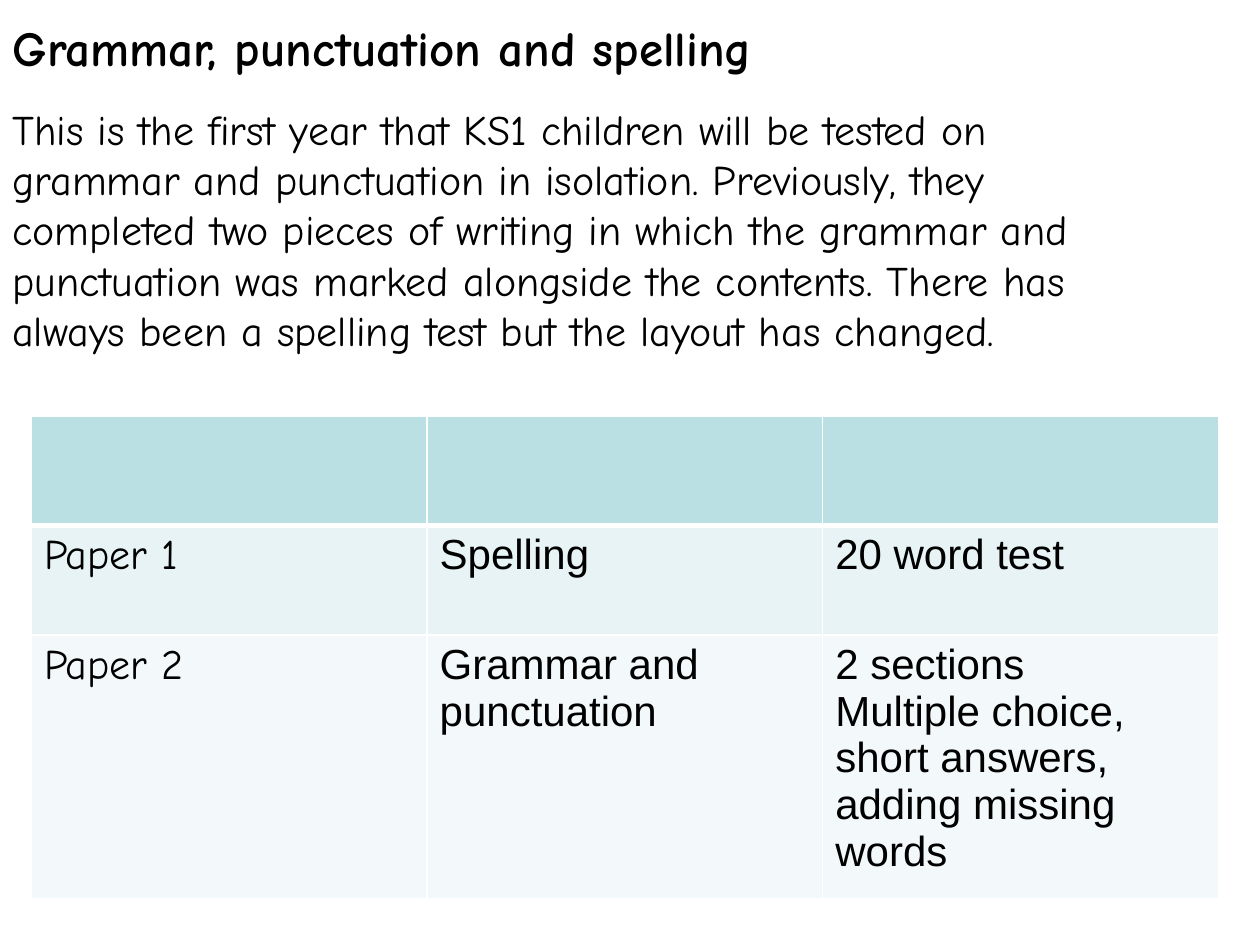
from lxml import etree
from pptx import Presentation
from pptx.dml.color import RGBColor
from pptx.enum import text
from pptx.oxml import ns
from pptx.util import Inches, Pt

TITLE = "Grammar, punctuation and spelling"
INTRO = (
    "This is the first year that KS1 children will be tested on grammar and "
    "punctuation in isolation. Previously, they completed two pieces of writing "
    "in which the grammar and punctuation was marked alongside the contents. "
    "There has always been a spelling test but the layout has changed."
)
PAPERS = [
    ("", "", ""),
    ("Paper 1", "Spelling", "20 word test"),
    ("Paper 2", "Grammar and punctuation",
     "2 sections\nMultiple choice, short answers, adding missing words"),
]
ROW_HEIGHTS = [0.87, 0.87, 2.09]
ROW_FILLS = ["BBE0E3", "E7F3F4", "F3F9FA"]
COLUMN_FONTS = ["Comic Neue", "Arial", "Arial"]
COLUMN_WIDTH = 3.14


def color(value):
    return RGBColor.from_string(value)


def style(tf, name, size, bold=False):
    for p in tf.paragraphs:
        p.alignment = text.PP_ALIGN.LEFT
        p.font.name = name
        p.font.size = Pt(size)
        p.font.bold = bold
        p.font.color.rgb = color("000000")


def fill_box(sp, box, content, size, bold=False):
    sp.left, sp.top, sp.width, sp.height = map(Inches, box)
    tf = sp.text_frame
    tf.text = content
    tf.word_wrap = True
    tf.auto_size = text.MSO_AUTO_SIZE.NONE
    tf.vertical_anchor = text.MSO_ANCHOR.TOP
    style(tf, "Comic Neue", size, bold)


def add_borders(cell, widths):
    props = cell._tc.get_or_add_tcPr()
    for side, width in widths.items():
        line = etree.SubElement(props, ns.qn(f"a:ln{side}"), w=str(Pt(width)))
        fill = etree.SubElement(line, ns.qn("a:solidFill"))
        etree.SubElement(fill, ns.qn("a:srgbClr"), val="FFFFFF")


def add_papers_table(s):
    rows, cols = len(PAPERS), len(COLUMN_FONTS)
    table = s.shapes.add_table(
        rows, cols, Inches(0.25), Inches(3.3),
        Inches(COLUMN_WIDTH * cols), Inches(sum(ROW_HEIGHTS))).table
    for column in table.columns:
        column.width = Inches(COLUMN_WIDTH)
    for r, values in enumerate(PAPERS):
        table.rows[r].height = Inches(ROW_HEIGHTS[r])
        for c, value in enumerate(values):
            cell = table.cell(r, c)
            cell.text = value
            style(cell.text_frame, COLUMN_FONTS[c], 24)
            add_borders(cell, {"L": 1, "R": 1, "T": 3 if r == 1 else 1,
                               "B": 3 if r == 0 else 1})
            cell.fill.solid()
            cell.fill.fore_color.rgb = color(ROW_FILLS[r])


def main():
    prs = Presentation()
    prs.slide_width, prs.slide_height = Inches(10), Inches(7.5)
    s = prs.slides.add_slide(prs.slide_layouts[5])
    fill_box(s.shapes.title, (0, 0.09, 7.89, 0.57), TITLE, 28, bold=True)
    intro = s.shapes.add_textbox(0, 0, 0, 0)
    fill_box(intro, (0, 0.77, 8.74, 2.2), INTRO, 24)
    add_papers_table(s)
    prs.save("out.pptx")


if __name__ == "__main__":
    main()
